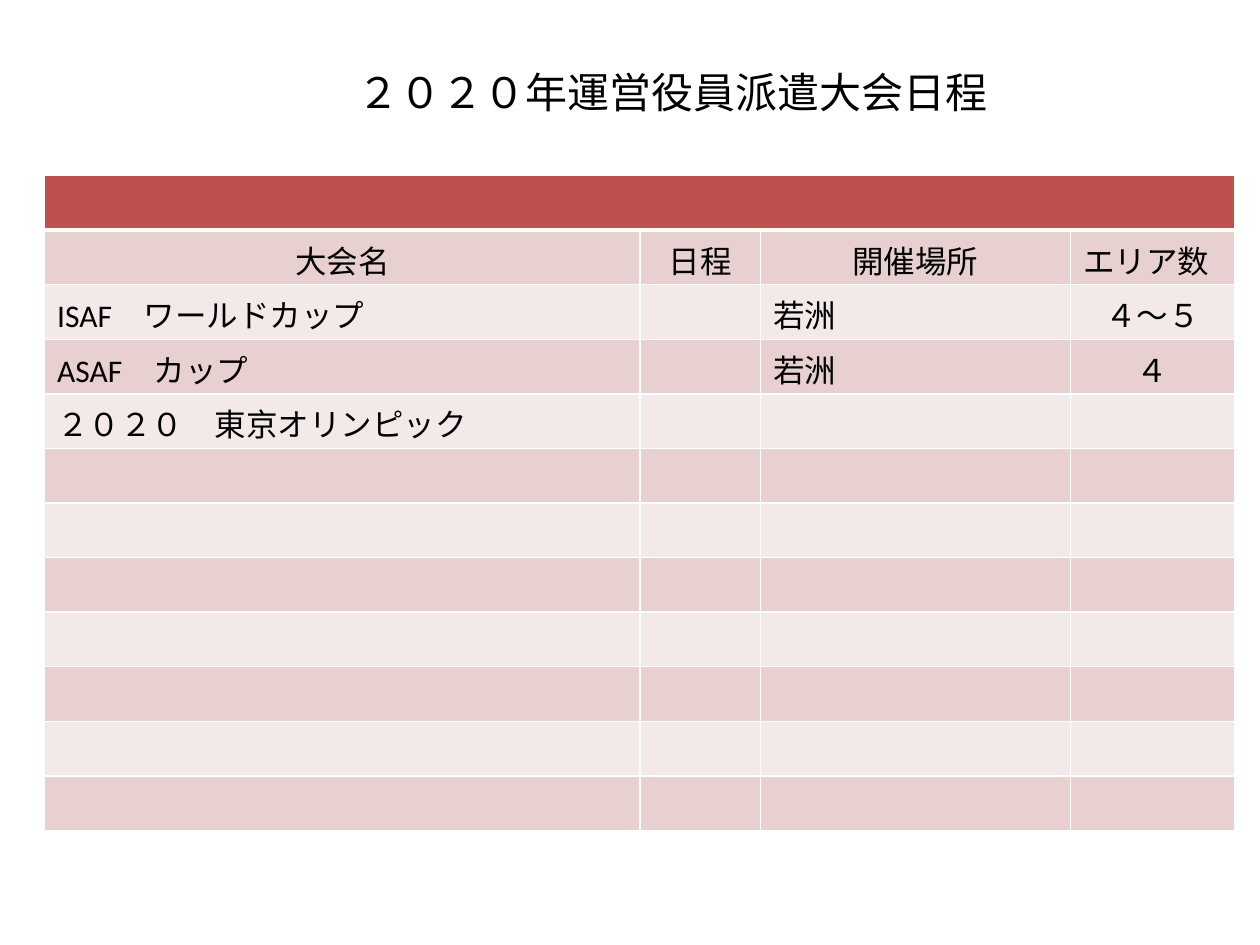
from lxml import etree
from pptx import Presentation
from pptx import util as u
from pptx.dml.color import RGBColor
from pptx.enum import text
from pptx.oxml import ns

COLORS = {
    "text": "000000",
    "header": "C0504D",
    "band_dark": "E8D0D0",
    "band_light": "F4E9E9",
    "border": "FFFFFF",
}
LEFT, CENTER = text.PP_ALIGN.LEFT, text.PP_ALIGN.CENTER

COLUMN_WIDTHS = [12, 2.43, 6.25, 3.31]
ROW_COUNT = 12
ROW_HEIGHT = 1.1
HEADINGS = ["大会名", "日程", "開催場所", "エリア数"]
EVENTS = [
    ["ISAF　ワールドカップ", "", "若洲", "４～５"],
    ["ASAF　カップ", "", "若洲", "４"],
    ["２０２０　東京オリンピック", "", "", ""],
]


def write(tf, content, size=18, color="text", align=LEFT, font="Calibri"):
    p = tf.paragraphs[0]
    p.alignment = align
    p.font.size = u.Pt(size)
    if content:
        r = p.add_run()
        r.text = content
        r.font.name = font
        r.font.size = u.Pt(size)
        r.font.bold = False
        r.font.color.rgb = RGBColor.from_string(COLORS[color])


def set_borders(cell, bottom=1):
    """Draw all four cell edges 1 pt wide, except for the given bottom width."""
    tc_pr = cell._tc.get_or_add_tcPr()
    for side, width in zip("LRTB", (1, 1, 1, bottom)):
        ln = etree.SubElement(tc_pr, ns.qn(f"a:ln{side}"), w=str(u.Pt(width)))
        fill = etree.SubElement(ln, ns.qn("a:solidFill"))
        etree.SubElement(fill, ns.qn("a:srgbClr"), val=COLORS["border"])


class SlideBuilder:
    def __init__(self, slide):
        self.s = slide

    def title(self, content, x, y, w, h, indent):
        sp = self.s.shapes.add_textbox(u.Cm(x), u.Cm(y), u.Cm(w), u.Cm(h))
        tf = sp.text_frame
        tf.word_wrap = True
        tf.vertical_anchor = text.MSO_ANCHOR.MIDDLE
        tf.margin_left = u.Cm(indent)
        write(tf, content, size=24, align=CENTER)

    def table(self, x, y):
        frame = self.s.shapes.add_table(
            ROW_COUNT, len(COLUMN_WIDTHS), u.Cm(x), u.Cm(y),
            u.Cm(sum(COLUMN_WIDTHS)), u.Cm(ROW_COUNT * ROW_HEIGHT))
        table = frame.table
        table.first_row = table.horz_banding = False
        for column, width in zip(table.columns, COLUMN_WIDTHS):
            column.width = u.Cm(width)
        for i, row in enumerate(table.rows):
            row.height = u.Cm(ROW_HEIGHT)
            color = "header" if i == 0 else "band_dark" if i % 2 else "band_light"
            for cell in row.cells:
                self.cell(cell, color, bottom=3 if i == 0 else 1)
        table.cell(0, 0).merge(table.cell(0, len(COLUMN_WIDTHS) - 1))

        for i, values in enumerate([HEADINGS] + EVENTS, start=1):
            for j, value in enumerate(values):
                is_area = j == len(values) - 1
                centered = is_area != (i == 1)
                write(table.cell(i, j).text_frame, value,
                      align=CENTER if centered else LEFT)

    def cell(self, cell, color, bottom):
        set_borders(cell, bottom)
        cell.fill.solid()
        cell.fill.fore_color.rgb = RGBColor.from_string(COLORS[color])


def main():
    prs = Presentation()
    prs.slide_width, prs.slide_height = u.Cm(25.4), u.Cm(19.05)
    builder = SlideBuilder(prs.slides.add_slide(prs.slide_layouts[6]))
    builder.title("２０２０年運営役員派遣大会日程", 1.27, 0.76, 22.86, 2.16, indent=1.95)
    builder.table(0.9, 3.54)
    prs.save("out.pptx")


if __name__ == "__main__":
    main()
